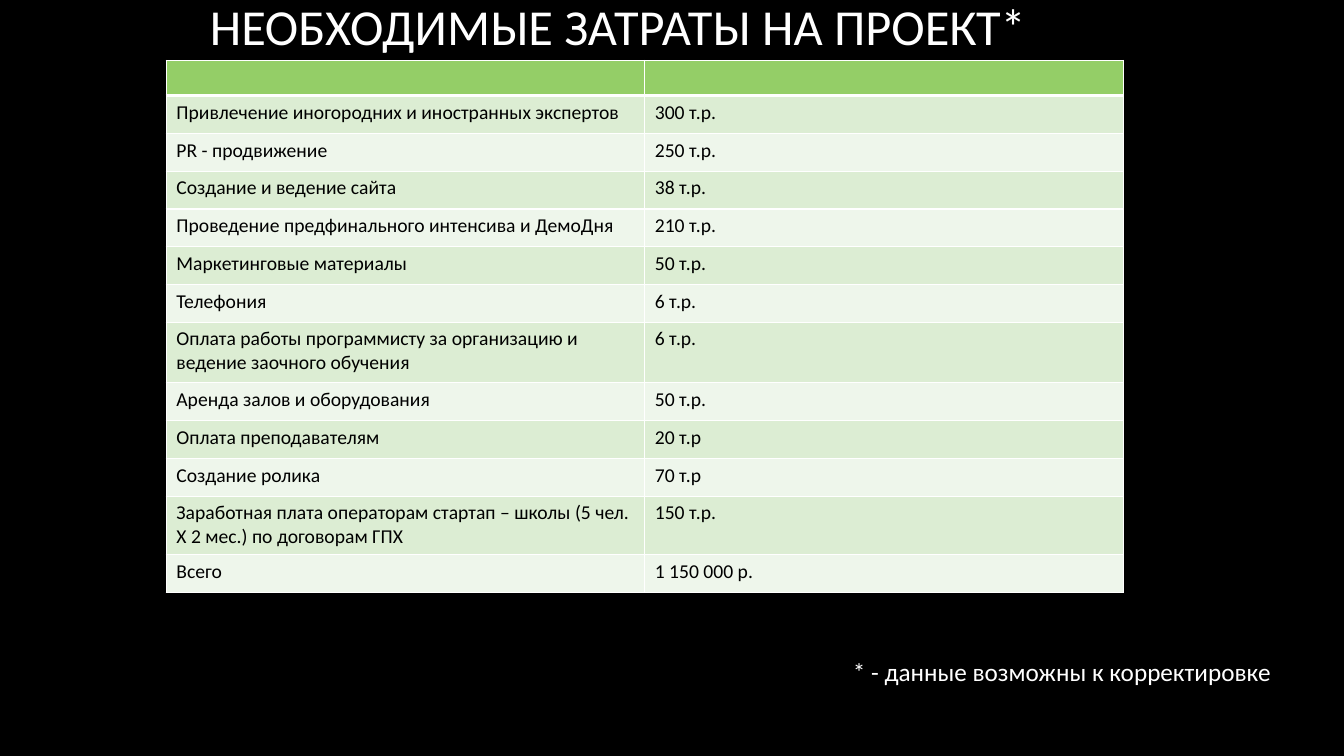
from dataclasses import dataclass

from lxml.etree import SubElement
from pptx import Presentation
from pptx.dml.color import RGBColor
from pptx.enum.text import MSO_ANCHOR, MSO_AUTO_SIZE, PP_ALIGN
from pptx.oxml import parse_xml
from pptx.oxml.ns import nsdecls, qn
from pptx.util import Inches, Pt


@dataclass(frozen=True)
class Theme:
    font: str = "Calibri"
    background: str = "000000"
    light: str = "FFFFFF"
    dark: str = "000000"
    header: str = "94CE67"
    bands: tuple = ("DCEDD3", "EEF6EB")
    title_size: int = 36
    note_size: int = 18
    table_size: int = 14
    rule: int = 1
    header_rule: int = 3


# Wording of the slide
TITLE = "НЕОБХОДИМЫЕ ЗАТРАТЫ НА ПРОЕКТ*"
FOOTNOTE = "* - данные возможны к корректировке"
COSTS = [
    ("Привлечение иногородних и иностранных экспертов", "300 т.р."),
    ("PR - продвижение", "250 т.р."),
    ("Создание и ведение сайта", "38 т.р."),
    ("Проведение предфинального интенсива и ДемоДня", "210 т.р."),
    ("Маркетинговые материалы", "50 т.р."),
    ("Телефония", "6 т.р."),
    ("Оплата работы программисту за организацию и ведение заочного обучения", "6 т.р."),
    ("Аренда залов и оборудования", "50 т.р."),
    ("Оплата преподавателям", "20 т.р"),
    ("Создание ролика", "70 т.р"),
    ("Заработная плата операторам стартап – школы (5 чел. X 2 мес.) по договорам ГПХ",
     "150 т.р."),
    ("Всего", "1 150 000 р."),
]

# Row heights in grid rows; every other cost takes one row
HEADER_HEIGHT = 0.93
TWO_LINE_HEIGHTS = {6: 1.6, 10: 1.55}


class SlideBuilder:
    """Places elements on a grid of 40 columns by 20 rows."""

    def __init__(self, deck, theme):
        self.theme = theme
        self.column = deck.slide_width / 40
        self.row = deck.slide_height / 20
        self.slide = deck.slides.add_slide(deck.slide_layouts[6])
        backdrop = self.slide.background.fill
        backdrop.solid()
        backdrop.fore_color.rgb = RGBColor.from_string(theme.background)

    def area(self, left, top, width, height):
        return (round(left * self.column), round(top * self.row),
                round(width * self.column), round(height * self.row))

    def add_wording(self, paragraph, wording, size, color):
        run = paragraph.add_run()
        run.text = wording
        style = {"name": self.theme.font, "size": Pt(size), "bold": False}
        for attribute, value in style.items():
            setattr(run.font, attribute, value)
        run.font.color.rgb = RGBColor.from_string(color)

    def text(self, wording, place, size, align=PP_ALIGN.LEFT, **frame_format):
        frame = self.slide.shapes.add_textbox(*self.area(*place)).text_frame
        for attribute, value in frame_format.items():
            setattr(frame, attribute, value)
        frame.paragraphs[0].alignment = align
        self.add_wording(frame.paragraphs[0], wording, size, self.theme.light)

    def cell(self, cell, wording, color, top, bottom):
        cell.fill.solid()
        cell.fill.fore_color.rgb = RGBColor.from_string(color)
        paragraph = cell.text_frame.paragraphs[0]
        size = self.theme.table_size
        if wording:
            self.add_wording(paragraph, wording, size, self.theme.dark)
        else:
            # An empty cell keeps its row low through its end mark
            SubElement(paragraph._p, qn("a:endParaRPr"), sz=str(size * 100))
        # Borders come before the fill, in the order left, right, top, bottom
        rule = self.theme.rule
        edges = {"L": rule, "R": rule, "T": top, "B": bottom}
        for position, (side, width) in enumerate(edges.items()):
            cell._tc.get_or_add_tcPr().insert(position, parse_xml(
                f'<a:ln{side} {nsdecls("a")} w="{Pt(width)}"><a:solidFill>'
                f'<a:srgbClr val="{self.theme.light}"/></a:solidFill></a:ln{side}>'))

    def cost_table(self, costs, left, top, width):
        theme = self.theme
        heights = [HEADER_HEIGHT] + [TWO_LINE_HEIGHTS.get(i, 1) for i in range(len(costs))]
        place = self.area(left, top, width, sum(heights))
        table = self.slide.shapes.add_table(len(heights), 2, *place).table
        table.first_row = table.horz_banding = False
        for index, (height, entries) in enumerate(zip(heights, [("", "")] + costs)):
            table.rows[index].height = round(height * self.row)
            color = theme.bands[(index - 1) % 2] if index else theme.header
            above = theme.header_rule if index == 1 else theme.rule
            below = theme.header_rule if index == 0 else theme.rule
            for cell, wording in zip(table.rows[index].cells, entries):
                self.cell(cell, wording, color, above, below)


def main():
    deck = Presentation()
    deck.slide_width, deck.slide_height = Inches(13.33), Inches(7.5)
    theme = Theme()
    builder = SlideBuilder(deck, theme)

    # Heading
    builder.text(TITLE, (2.1, -0.27, 32.59, 1.87), theme.title_size, PP_ALIGN.CENTER,
                 word_wrap=True, vertical_anchor=MSO_ANCHOR.MIDDLE)
    # Project costs
    builder.cost_table(COSTS, 4.95, 1.6, 28.48)
    # Footnote
    builder.text(FOOTNOTE, (25.09, 17.23, 13.2, 1.07), theme.note_size,
                 word_wrap=False, auto_size=MSO_AUTO_SIZE.SHAPE_TO_FIT_TEXT)

    deck.save("out.pptx")


if __name__ == "__main__":
    main()
